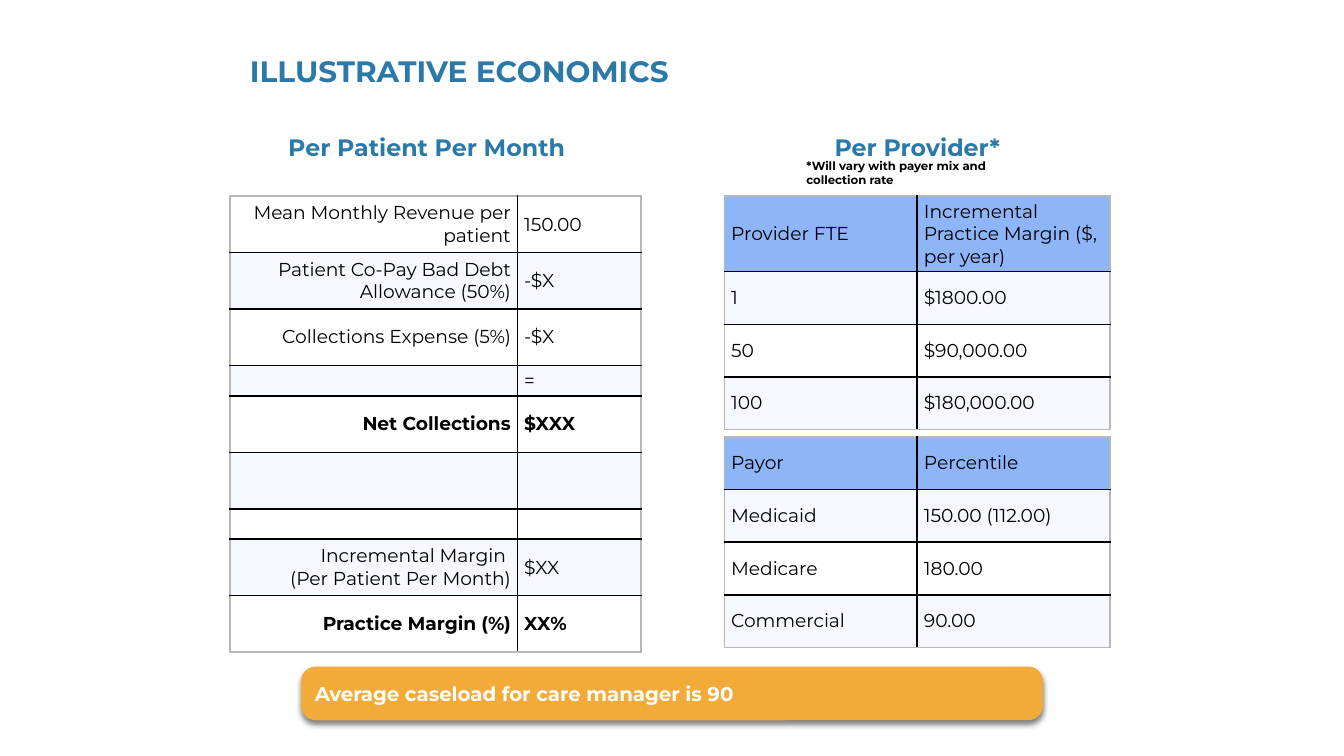
import lxml.etree
import pptx
import pptx.dml.color
import pptx.enum.shapes
import pptx.enum.text
import pptx.oxml.ns
import pptx.util

Inches = pptx.util.Inches
ALIGN = pptx.enum.text.PP_ALIGN
MIDDLE = pptx.enum.text.MSO_ANCHOR.MIDDLE
qn = pptx.oxml.ns.qn

FONT = "Montserrat"
BLUE, TINT, ORANGE = "2B79A9", "4285F4", "F2AB39"
BLACK, WHITE, GRAY = "000000", "FFFFFF", "B7B7B7"

PATIENT_ROWS = [
    ("Mean Monthly Revenue per patient", "150.00"),
    ("Patient Co-Pay Bad Debt Allowance (50%)", "-$X"),
    ("Collections Expense (5%)", "-$X"),
    ("", "="),
    ("Net Collections", "$XXX"),
    ("", ""),
    ("", ""),
    ("Incremental Margin \n(Per Patient Per Month)", "$XX"),
    ("Practice Margin (%)", "XX%"),
]
PROVIDER_ROWS = [
    ("Provider FTE", "Incremental Practice Margin ($, per year)"),
    ("1", "$1800.00"),
    ("50", "$90,000.00"),
    ("100", "$180,000.00"),
]
PAYOR_ROWS = [
    ("Payor", "Percentile"),
    ("Medicaid", "150.00 (112.00)"),
    ("Medicare", "180.00"),
    ("Commercial", "90.00"),
]


def rgb(color):
    return pptx.dml.color.RGBColor.from_string(color)


def write_text(frame, text, size, color, bold=False, align=ALIGN.LEFT):
    frame.text = text
    frame.word_wrap = True
    for para in frame.paragraphs:
        para.alignment = align
        if not para.runs:
            # An empty paragraph keeps its line height in the end mark
            para._p.get_or_add_endParaRPr().set("sz", str(int(size * 100)))
        for span in para.runs:
            span.font.name = FONT
            span.font.size = pptx.util.Pt(size)
            span.font.bold = bold
            span.font.color.rgb = rgb(color)


def set_margins(frame, margin):
    frame.margin_left = frame.margin_right = Inches(margin)
    frame.margin_top = frame.margin_bottom = Inches(margin)
    frame.vertical_anchor = MIDDLE


def add_label(page, place, text, size, color, align=ALIGN.LEFT):
    box = page.shapes.add_textbox(*map(Inches, place))
    write_text(box.text_frame, text, size, color, True, align)
    return box


def add_title(page, text):
    title = page.shapes.title
    title.left, title.top = Inches(1.83), Inches(0.36)
    title.width, title.height = Inches(6.33), Inches(0.33)
    write_text(title.text_frame, text, 15.8, BLUE, True)
    set_margins(title.text_frame, 0.03)


def fill_cell(cell, alpha):
    """Tint a cell with the given percentage, or leave it clear at zero."""
    if not alpha:
        cell.fill.background()
        return
    cell.fill.solid()
    cell.fill.fore_color.rgb = rgb(TINT)
    color = next(cell._tc.tcPr.iter(qn("a:srgbClr")))
    lxml.etree.SubElement(color, qn("a:alpha")).set("val", str(alpha * 1000))


def set_borders(cell, colors):
    for index, (side, color) in enumerate(zip("LRTB", colors)):
        line = lxml.etree.Element(qn(f"a:ln{side}"), w="12700")
        fill = lxml.etree.SubElement(line, qn("a:solidFill"))
        lxml.etree.SubElement(fill, qn("a:srgbClr")).set("val", color)
        cell._tc.tcPr.insert(index, line)


def add_grid(page, left, top, widths, heights, rows, header=False,
             first_align=ALIGN.LEFT, bold_rows=()):
    frame = page.shapes.add_table(
        len(rows), len(widths), Inches(left), Inches(top),
        Inches(sum(widths)), Inches(sum(heights)))
    table = frame.table
    table.first_row = table.horz_banding = False
    for column, width in zip(table.columns, widths):
        column.width = Inches(width)
    last_row, last_column = len(rows) - 1, len(widths) - 1
    for r, texts in enumerate(rows):
        table.rows[r].height = Inches(heights[r])
        for c, text in enumerate(texts):
            cell = table.cell(r, c)
            align = first_align if c == 0 else ALIGN.LEFT
            write_text(cell.text_frame, text, 10, BLACK, r in bold_rows, align)
            cell.vertical_anchor = MIDDLE
            cell.margin_left = cell.margin_right = Inches(0.05)
            cell.margin_top = cell.margin_bottom = Inches(0.03)
            # Odd rows are banded; a header row has a stronger tint
            fill_cell(cell, 60 if header and r == 0 else 5 * (r % 2))
            # Gray frame outside, black rules inside
            outer = (c == 0, c == last_column, r == 0, r == last_row)
            set_borders(cell, [GRAY if edge else BLACK for edge in outer])


def add_banner(page, text):
    banner = page.shapes.add_shape(
        pptx.enum.shapes.MSO_SHAPE.ROUNDED_RECTANGLE,
        Inches(2.24), Inches(4.96), Inches(5.52), Inches(0.4))
    banner.adjustments[0] = 0.275
    banner.fill.solid()
    banner.fill.fore_color.rgb = rgb(ORANGE)
    banner.line.fill.background()
    write_text(banner.text_frame, text, 10.6, WHITE, True)
    set_margins(banner.text_frame, 0.03)
    banner.text_frame.margin_left = Inches(0.07)
    # Soft shadow straight below
    banner.shadow.inherit = False
    effects = banner._element.spPr.find(qn("a:effectLst"))
    shadow = lxml.etree.SubElement(
        effects, qn("a:outerShdw"), blurRad="38100", dist="25400",
        dir="5400000", algn="ctr", rotWithShape="0")
    color = lxml.etree.SubElement(shadow, qn("a:srgbClr"), val=BLACK)
    lxml.etree.SubElement(color, qn("a:alpha"), val="50000")


def main():
    # Widescreen page, 16:9
    deck = pptx.Presentation()
    deck.slide_width, deck.slide_height = Inches(10), Inches(10 * 9 / 16)
    page = deck.slides.add_slide(deck.slide_layouts[5])

    # Title and column headings
    add_title(page, "ILLUSTRATIVE ECONOMICS")
    for left, text in ((1.3, "Per Patient Per Month"), (4.95, "Per Provider*")):
        add_label(page, (left, 0.94, 3.75, 0.31), text, 12.7, BLUE, ALIGN.CENTER)
    note = add_label(page, (5.97, 1.2, 1.69, 0.17),
                     "*Will vary with payer mix and collection rate", 6.3, BLACK)
    set_margins(note.text_frame, 0.03)

    # Monthly figures on the left, provider and payor figures on the right
    patient_heights = [0.22 if r in (3, 6) else 0.42
                       for r in range(len(PATIENT_ROWS))]
    add_grid(page, 1.71, 1.46, (2.14, 0.92), patient_heights, PATIENT_ROWS,
             first_align=ALIGN.RIGHT, bold_rows=(4, 8))
    for top, rows in ((1.46, PROVIDER_ROWS), (3.25, PAYOR_ROWS)):
        add_grid(page, 5.39, top, [2.87 / 2] * 2, [1.57 / len(rows)] * len(rows),
                 rows, header=True)

    add_banner(page, "Average caseload for care manager is 90")
    deck.save("out.pptx")


if __name__ == "__main__":
    main()
